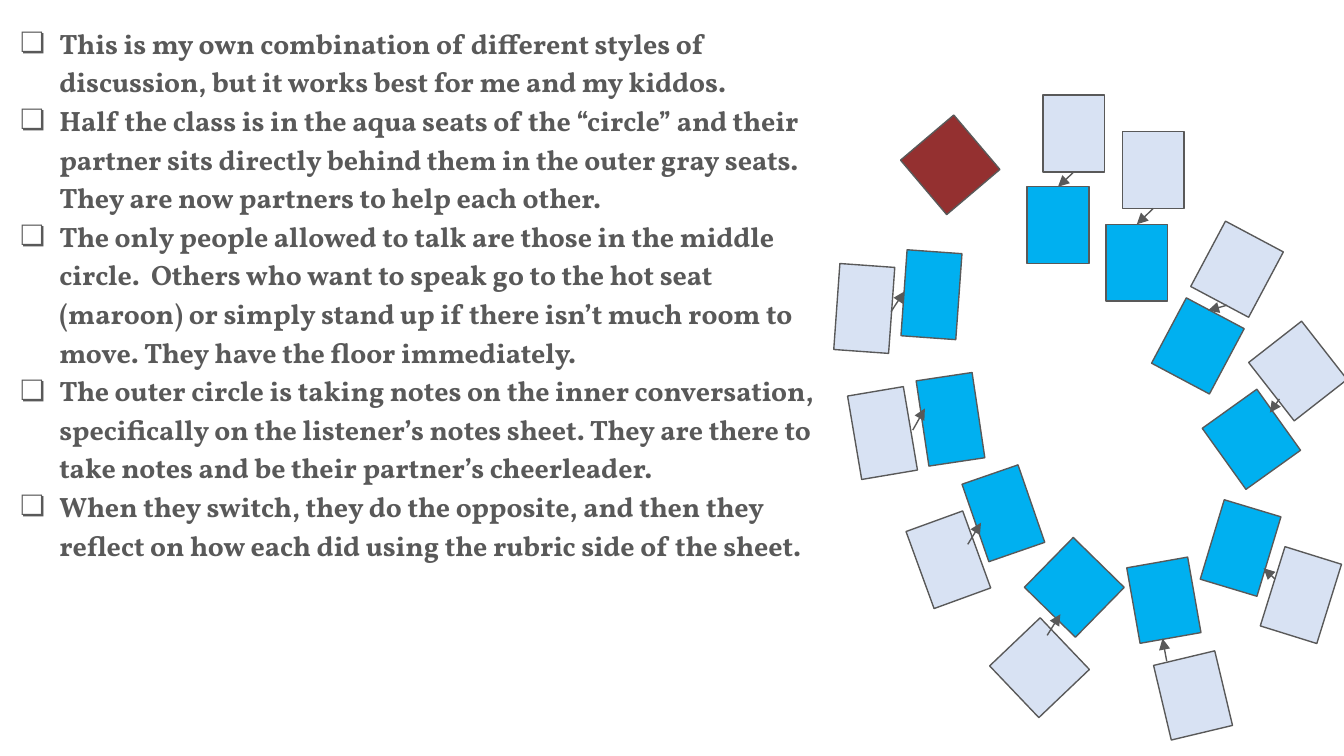
from lxml import etree
from pptx import Presentation
from pptx.dml.color import RGBColor
from pptx.enum import shapes, text
from pptx.oxml import ns
from pptx.util import Cm, Pt

GRAY = RGBColor(0x59, 0x59, 0x59)
AQUA = RGBColor(0x00, 0xB0, 0xF0)
PALE = RGBColor(0xD8, 0xE2, 0xF3)
MAROON = RGBColor(0x85, 0x12, 0x12)

RULES = [
    "This is my own combination of different styles of discussion, but it works best for me and my kiddos.",
    "Half the class is in the aqua seats of the “circle” and their partner sits directly behind them "
    "in the outer gray seats. They are now partners to help each other.",
    "The only people allowed to talk are those in the middle circle.  Others who want to speak go to the "
    "hot seat (maroon) or simply stand up if there isn’t much room to move. They have the floor immediately.",
    "The outer circle is taking notes on the inner conversation, specifically on the listener’s notes sheet. "
    "They are there to take notes and be their partner’s cheerleader.",
    "When they switch, they do the opposite, and then they reflect on how each did using the rubric side "
    "of the sheet.",
]

# Seats are (left, top, width, height, rotation) in cm and degrees.
# Each pair is (inner seat, outer seat, arrow ends); upright pairs are joined side to side.
PAIRS = [
    ((19.41, 3.53, 1.17, 1.45, 0), (19.71, 1.80, 1.17, 1.45, 0), None),
    ((20.90, 4.24, 1.17, 1.45, 0), (21.21, 2.49, 1.17, 1.45, 0), None),
    ((22.02, 5.84, 1.24, 1.40, 28), (22.76, 4.39, 1.24, 1.40, 28), (23.19, 5.77, 22.83, 5.87)),
    ((22.94, 7.67, 1.42, 1.27, 54.4), (23.83, 6.38, 1.40, 1.27, 52), (24.18, 7.54, 24.00, 7.80)),
    ((22.66, 9.80, 1.57, 1.12, 106.8), (23.80, 10.69, 1.57, 1.12, 107.3), (24.10, 10.95, 23.88, 10.74)),
    ((16.79, 5.05, 1.63, 1.04, 274.1), (15.52, 5.31, 1.63, 1.04, 274.1), (16.84, 5.89, 17.09, 5.51)),
    ((17.15, 7.39, 1.63, 1.07, 261.5), (15.88, 7.65, 1.60, 1.07, 260.4), (17.25, 8.13, 17.48, 7.72)),
    ((18.19, 9.14, 1.55, 1.12, 250.9), (17.15, 10.01, 1.55, 1.14, 250), (18.29, 10.29, 18.54, 9.88)),
    ((19.63, 10.44, 1.35, 1.32, 224.4), (18.97, 11.96, 1.35, 1.32, 226.4), (19.79, 12.01, 20.04, 11.61)),
    ((21.41, 10.62, 1.17, 1.45, 170), (21.95, 12.42, 1.19, 1.45, 166.6), (22.05, 12.50, 21.97, 12.07)),
]
HOT_SEAT = (17.30, 2.44, 1.32, 1.35, 319.7)


def add_rules(placeholder):
    placeholder.left, placeholder.top = Cm(0.08), Cm(0.15)
    placeholder.width, placeholder.height = Cm(15.93), Cm(12.78)
    frame = placeholder.text_frame
    frame.word_wrap = True
    frame.auto_size = text.MSO_AUTO_SIZE.NONE
    frame.vertical_anchor = text.MSO_ANCHOR.TOP
    frame.margin_left = frame.margin_right = Cm(0.25)
    frame.margin_top = frame.margin_bottom = Cm(0.25)
    for index, rule in enumerate(RULES):
        paragraph = frame.add_paragraph() if index else frame.paragraphs[0]
        paragraph.alignment = text.PP_ALIGN.LEFT
        paragraph.line_spacing = 1.15
        paragraph.space_before = paragraph.space_after = Pt(0)
        add_checkbox(paragraph)
        run = paragraph.add_run()
        run.text = rule
        run.font.name = "Vollkorn"
        run.font.size = Pt(15)
        run.font.bold = True
        run.font.color.rgb = GRAY


def add_checkbox(paragraph):
    properties = paragraph._p.get_or_add_pPr()
    properties.set("marL", str(Cm(0.79)))
    properties.set("indent", str(Cm(-0.74)))
    color = etree.SubElement(properties, ns.qn("a:buClr"))
    etree.SubElement(color, ns.qn("a:srgbClr"), val=str(GRAY))
    etree.SubElement(properties, ns.qn("a:buChar"), char="❏")


def add_seat(slide, seat, fill):
    *box, rotation = seat
    shape = slide.shapes.add_shape(shapes.MSO_SHAPE.RECTANGLE, *map(Cm, box))
    shape.rotation = rotation
    shape.shadow.inherit = False
    shape.fill.solid()
    shape.fill.fore_color.rgb = fill
    shape.line.color.rgb = GRAY
    shape.line.width = Pt(0.75)
    return shape


def add_arrow(slide, inner, outer, ends):
    points = map(Cm, ends or (0, 0, 0, 0))
    arrow = slide.shapes.add_connector(shapes.MSO_CONNECTOR.STRAIGHT, *points)
    if ends is None:
        arrow.begin_connect(outer, 2)
        arrow.end_connect(inner, 0)
    arrow.line.color.rgb = GRAY
    arrow.line.width = Pt(0.75)
    etree.SubElement(arrow.line._get_or_add_ln(), ns.qn("a:tailEnd"), type="triangle")
    etree.SubElement(arrow._element.spPr, ns.qn("a:effectLst"))


def main():
    presentation = Presentation()
    presentation.slide_width, presentation.slide_height = Cm(25.4), Cm(14.29)
    slide = presentation.slides.add_slide(presentation.slide_layouts[1])
    title = slide.shapes.title._element
    title.getparent().remove(title)
    add_rules(slide.placeholders[1])

    seated = [(add_seat(slide, inner, AQUA), add_seat(slide, outer, PALE), ends)
              for inner, outer, ends in PAIRS]
    hot_seat = add_seat(slide, HOT_SEAT, MAROON)
    color = hot_seat.fill._xPr.find(ns.qn("a:solidFill"))[0]
    etree.SubElement(color, ns.qn("a:alpha"), val="87000")
    for inner, outer, ends in seated:
        add_arrow(slide, inner, outer, ends)
    presentation.save("out.pptx")


if __name__ == "__main__":
    main()
